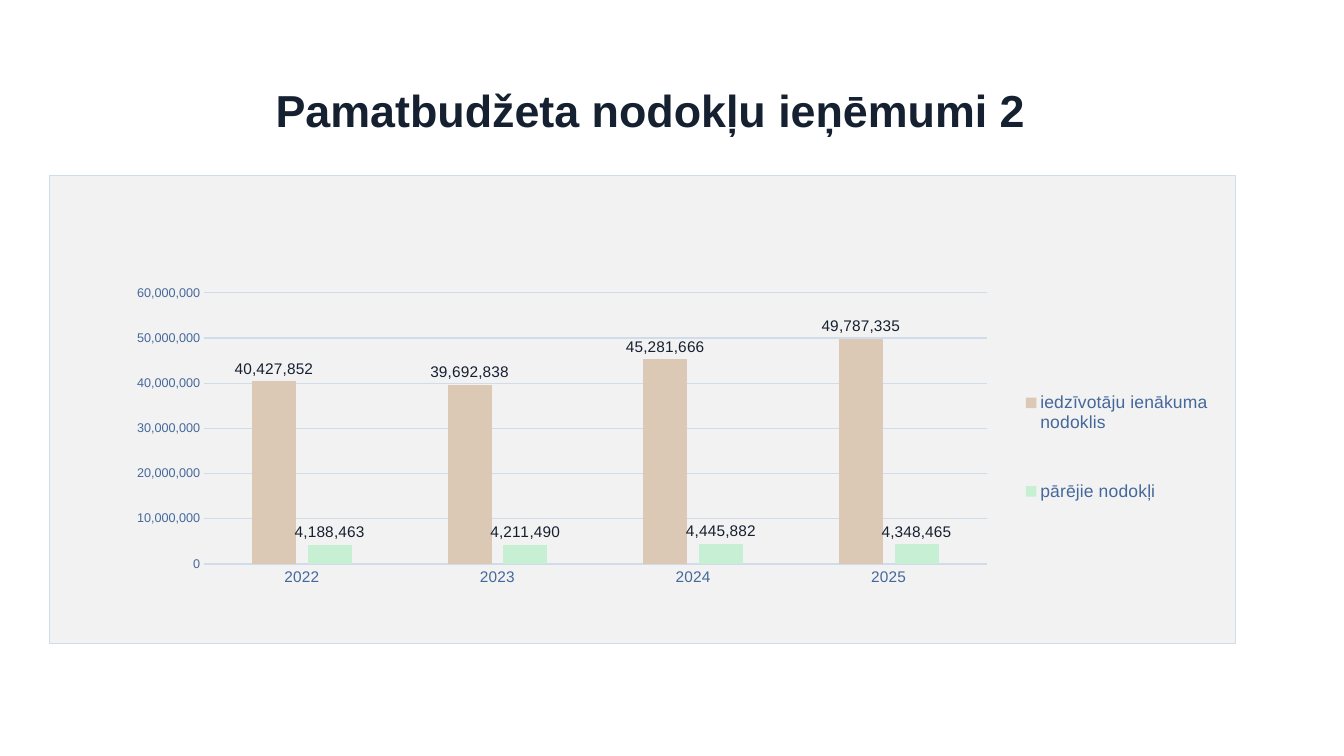
import dataclasses

import pptx
import pptx.chart.chart
import pptx.chart.data
import pptx.dml.color
import pptx.enum.chart
import pptx.enum.text
import pptx.oxml
import pptx.oxml.ns
import pptx.shapes.base
import pptx.slide
import pptx.text.text
import pptx.util

Inches = pptx.util.Inches
Pt = pptx.util.Pt
RGBColor = pptx.dml.color.RGBColor

FACE = "Arial"
INK = RGBColor(0x15, 0x20, 0x30)
BLUE = RGBColor(0x44, 0x68, 0x9B)
RULE = RGBColor(0xD1, 0xDC, 0xEB)
PANEL = RGBColor(0xF2, 0xF2, 0xF2)
SAND = RGBColor(0xDB, 0xC9, 0xB5)
MINT = RGBColor(0xC7, 0xEF, 0xD4)


@dataclasses.dataclass
class Tax:
    name: str
    sums: tuple[int, ...]
    color: RGBColor


YEARS = ("2022", "2023", "2024", "2025")
TAXES = (
    Tax("iedzīvotāju ienākuma nodoklis",
        (40427852, 39692838, 45281666, 49787335), SAND),
    Tax("pārējie nodokļi", (4188463, 4211490, 4445882, 4348465), MINT),
)


def set_font(font: pptx.text.text.Font, size: float, color: RGBColor,
             bold: bool = False) -> None:
    font.name = FACE
    font.size = Pt(size)
    font.bold = bold
    font.color.rgb = color


def put_text(shape: pptx.shapes.base.BaseShape, text: str, *, size: float,
             color: RGBColor, bold: bool = False) -> None:
    frame = shape.text_frame
    frame.text = text
    frame.word_wrap = True
    frame.auto_size = pptx.enum.text.MSO_AUTO_SIZE.NONE
    frame.vertical_anchor = pptx.enum.text.MSO_ANCHOR.MIDDLE
    line = frame.paragraphs[0]
    line.alignment = pptx.enum.text.PP_ALIGN.CENTER
    line.line_spacing = 0.9
    set_font(line.runs[0].font, size, color, bold)


def layout(x: float, y: float, w: float, h: float, inner: bool = False):
    """Manual chart layout in fractions of the chart area."""
    target = '<c:layoutTarget val="inner"/>' if inner else ""
    return pptx.oxml.parse_xml(
        f'<c:layout {pptx.oxml.ns.nsdecls("c")}><c:manualLayout>{target}'
        '<c:xMode val="edge"/><c:yMode val="edge"/>'
        f'<c:x val="{x}"/><c:y val="{y}"/><c:w val="{w}"/><c:h val="{h}"/>'
        '</c:manualLayout></c:layout>')


def set_panel(chart: pptx.chart.chart.Chart) -> None:
    root = chart.element
    root.find(pptx.oxml.ns.qn("c:chart")).addnext(pptx.oxml.parse_xml(
        f'<c:spPr {pptx.oxml.ns.nsdecls("c", "a")}>'
        f'<a:solidFill><a:srgbClr val="{PANEL}"/></a:solidFill>'
        f'<a:ln w="{Pt(0.75)}"><a:solidFill><a:srgbClr val="{RULE}"/>'
        '</a:solidFill></a:ln></c:spPr>'))


def set_axes(chart: pptx.chart.chart.Chart) -> None:
    years, sums = chart.category_axis, chart.value_axis
    for axis, size in ((years, 11), (sums, 9)):
        axis.major_tick_mark = pptx.enum.chart.XL_TICK_MARK.NONE
        axis.minor_tick_mark = pptx.enum.chart.XL_TICK_MARK.NONE
        set_font(axis.tick_labels.font, size, BLUE)
    sums.has_major_gridlines = True
    for line in (years.format.line, sums.major_gridlines.format.line):
        line.color.rgb = RULE
        line.width = Pt(0.75)
    sums.format.line.fill.background()
    sums.tick_labels.number_format = "#,##0"
    sums.tick_labels.number_format_is_linked = False


def add_bars(slide: pptx.slide.Slide) -> None:
    data = pptx.chart.data.CategoryChartData(number_format="#,##0")
    data.categories = YEARS
    for tax in TAXES:
        data.add_series(tax.name, tax.sums)
    chart = slide.shapes.add_chart(
        pptx.enum.chart.XL_CHART_TYPE.COLUMN_CLUSTERED,
        Inches(0.49), Inches(1.74), Inches(11.77), Inches(4.65), data).chart
    chart.has_title = False
    set_font(chart.font, 10, INK)
    set_panel(chart)
    set_axes(chart)

    # Columns and their labels
    plot = chart.plots[0]
    plot.gap_width = 219
    plot.overlap = -27
    plot.vary_by_categories = False
    for tax, bars in zip(TAXES, plot.series):
        bars.format.fill.solid()
        bars.format.fill.fore_color.rgb = tax.color
        tags = bars.data_labels
        tags.show_value = True
        tags.position = pptx.enum.chart.XL_LABEL_POSITION.OUTSIDE_END
        set_font(tags.font, 11, INK)

    # Legend
    chart.has_legend = True
    legend = chart.legend
    legend.position = pptx.enum.chart.XL_LEGEND_POSITION.RIGHT
    legend.include_in_layout = False
    set_font(legend.font, 12.5, BLUE)

    # Places of plot and legend
    area = chart.element.find(".//" + pptx.oxml.ns.qn("c:plotArea"))
    key = chart.element.find(".//" + pptx.oxml.ns.qn("c:legend"))
    tag = pptx.oxml.ns.qn("c:layout")
    for part in (area, key):
        for old in part.findall(tag):
            part.remove(old)
    area.insert(0, layout(0.13, 0.25, 0.66, 0.58, inner=True))
    key.find(pptx.oxml.ns.qn("c:legendPos")).addnext(
        layout(0.81, 0.36, 0.18, 0.44))


def main() -> None:
    deck = pptx.Presentation()
    deck.slide_width = Inches(13.33)
    deck.slide_height = Inches(7.5)
    slide = deck.slides.add_slide(deck.slide_layouts[5])

    # Title
    title = slide.shapes.title
    title.left, title.top = Inches(0.49), Inches(0.4)
    title.width, title.height = Inches(11.93), Inches(1.45)
    put_text(title, "Pamatbudžeta nodokļu ieņēmumi 2",
             size=32, color=INK, bold=True)

    # Chart
    add_bars(slide)
    deck.save("out.pptx")


if __name__ == "__main__":
    main()
